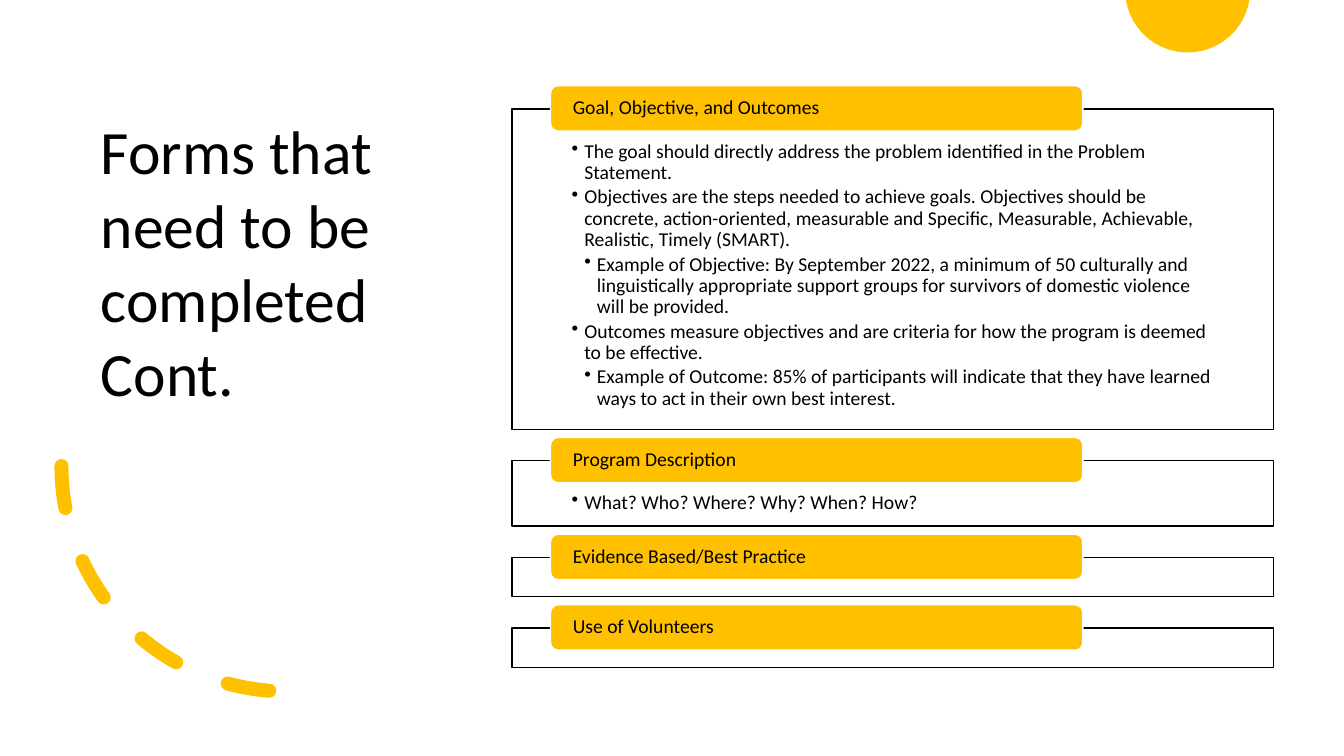
from dataclasses import dataclass
from math import asin, cos, pi, sin

from lxml.etree import SubElement
from pptx import Presentation
from pptx.dml.color import RGBColor
from pptx.enum.dml import MSO_LINE
from pptx.enum.shapes import MSO_SHAPE
from pptx.enum.text import MSO_ANCHOR, PP_ALIGN
from pptx.oxml.ns import qn
from pptx.util import Inches, Pt

GOLD = "FFC000"
WHITE = "FFFFFF"
BLACK = "000000"
FONT = "Calibri"
BOX_LEFT, BOX_TOP, BOX_WIDTH, BOX_GAP = 5.08, 1.08, 7.55, 0.31
HEADER_LEFT, HEADER_RISE, HEADER_WIDTH, HEADER_HEIGHT = 5.46, 0.23, 5.28, 0.45
BULLET_INDENT = 0.125


@dataclass
class Bullet:
    text: str
    level: int = 1


@dataclass
class Section:
    header: str
    height: float
    bullets: tuple[Bullet, ...] = ()


SECTIONS = (
    Section("Goal, Objective, and Outcomes", 3.18, (
        Bullet("The goal should directly address the problem identified in the Problem Statement."),
        Bullet("Objectives are the steps needed to achieve goals. Objectives should be concrete, "
               "action-oriented, measurable and Specific, Measurable, Achievable, Realistic, "
               "Timely (SMART)."),
        Bullet("Example of Objective: By September 2022, a minimum of 50 culturally and "
               "linguistically appropriate support groups for survivors of domestic violence "
               "will be provided.", 2),
        Bullet("Outcomes measure objectives and are criteria for how the program is deemed "
               "to be effective."),
        Bullet("Example of Outcome: 85% of participants will indicate that they have learned "
               "ways to act in their own best interest.", 2),
    )),
    Section("Program Description", 0.65, (Bullet("What? Who? Where? Why? When? How?"),)),
    Section("Evidence Based/Best Practice", 0.39),
    Section("Use of Volunteers", 0.39),
)


def color(value: str) -> RGBColor:
    return RGBColor.from_string(value)


def add_run(paragraph, text: str, size: float) -> None:
    run = paragraph.add_run()
    run.text = text
    run.font.name = FONT
    run.font.size = Pt(size)
    run.font.color.rgb = color(BLACK)


def add_panel(slide, kind, left: float, top: float, width: float, height: float,
              fill: str, line: str):
    panel = slide.shapes.add_shape(kind, Inches(left), Inches(top), Inches(width), Inches(height))
    panel.shadow.inherit = False
    panel.fill.solid()
    panel.fill.fore_color.rgb = color(fill)
    panel.line.color.rgb = color(line)
    panel.line.width = Pt(1)
    return panel


def set_frame(shape, anchor, side: float, top: float, bottom: float):
    frame = shape.text_frame
    frame.word_wrap = True
    frame.vertical_anchor = anchor
    frame.margin_left = frame.margin_right = Inches(side)
    frame.margin_top, frame.margin_bottom = Inches(top), Inches(bottom)
    return frame


def add_bullet(paragraph, bullet: Bullet) -> None:
    paragraph.level = bullet.level
    paragraph.alignment = PP_ALIGN.LEFT
    paragraph.line_spacing = 0.9
    paragraph.space_after = Pt(2.5)
    properties = paragraph._p.get_or_add_pPr()
    properties.set("marL", str(Inches(BULLET_INDENT * bullet.level)))
    properties.set("indent", str(-Inches(BULLET_INDENT)))
    SubElement(properties, qn("a:buChar")).set("char", "•")
    add_run(paragraph, bullet.text, 14)


def add_section(slide, section: Section, top: float) -> None:
    box = add_panel(slide, MSO_SHAPE.RECTANGLE, BOX_LEFT, top, BOX_WIDTH, section.height,
                    WHITE, BLACK)
    box_color = box.fill._xPr.find(qn("a:solidFill")).find(qn("a:srgbClr"))
    SubElement(box_color, qn("a:alpha")).set("val", "90000")
    if section.bullets:
        frame = set_frame(box, MSO_ANCHOR.TOP, 0.59, 0.32, 0.11)
        for index, bullet in enumerate(section.bullets):
            add_bullet(frame.add_paragraph() if index else frame.paragraphs[0], bullet)

    header = add_panel(slide, MSO_SHAPE.ROUNDED_RECTANGLE, HEADER_LEFT, top - HEADER_RISE,
                       HEADER_WIDTH, HEADER_HEIGHT, GOLD, WHITE)
    paragraph = set_frame(header, MSO_ANCHOR.MIDDLE, 0.2, 0, 0).paragraphs[0]
    paragraph.alignment = PP_ALIGN.LEFT
    paragraph.line_spacing = 0.9
    add_run(paragraph, section.header, 14)


def add_sun(slide) -> None:
    center_x, center_y, radius, steps = 11.78, -0.1, 0.62, 60
    start = asin(-center_y / radius)
    angles = [start + (pi - 2 * start) * step / steps for step in range(steps + 1)]
    points = [(Inches(center_x + radius * cos(angle)), Inches(center_y + radius * sin(angle)))
              for angle in angles]
    builder = slide.shapes.build_freeform(*points[0])
    builder.add_line_segments(points[1:], close=True)
    sun = builder.convert_to_shape()
    sun.shadow.inherit = False
    sun.fill.solid()
    sun.fill.fore_color.rgb = color(GOLD)
    sun.line.fill.background()


def add_dashed_arc(slide) -> None:
    arc = slide.shapes.add_shape(MSO_SHAPE.ARC, Inches(0.61), Inches(2.39),
                                 Inches(4.47), Inches(4.47))
    arc.shadow.inherit = False
    arc.rotation = 90
    arc._element.spPr.find(qn("a:xfrm")).set("flipV", "1")
    arc.fill.background()
    arc.line.color.rgb = color(GOLD)
    arc.line.width = Pt(10)
    arc.line.dash_style = MSO_LINE.DASH
    arc.line._get_or_add_ln().set("cap", "rnd")


def add_title(slide, text: str) -> None:
    title = slide.shapes.title
    title.left, title.top = Inches(0.9), Inches(1.07)
    title.width, title.height = Inches(3.88), Inches(3.06)
    paragraph = set_frame(title, MSO_ANCHOR.TOP, 0.1, 0.05, 0.05).paragraphs[0]
    paragraph.alignment = PP_ALIGN.LEFT
    add_run(paragraph, text, 44)


def main() -> None:
    presentation = Presentation()
    presentation.slide_width, presentation.slide_height = Inches(13.33), Inches(7.5)
    slide = presentation.slides.add_slide(presentation.slide_layouts[5])
    slide.background.fill.solid()
    slide.background.fill.fore_color.rgb = color(WHITE)
    add_sun(slide)
    add_dashed_arc(slide)
    add_title(slide, "Forms that need to be completed Cont.")
    top = BOX_TOP
    for section in SECTIONS:
        add_section(slide, section, top)
        top += section.height + BOX_GAP
    presentation.save("out.pptx")


if __name__ == "__main__":
    main()
